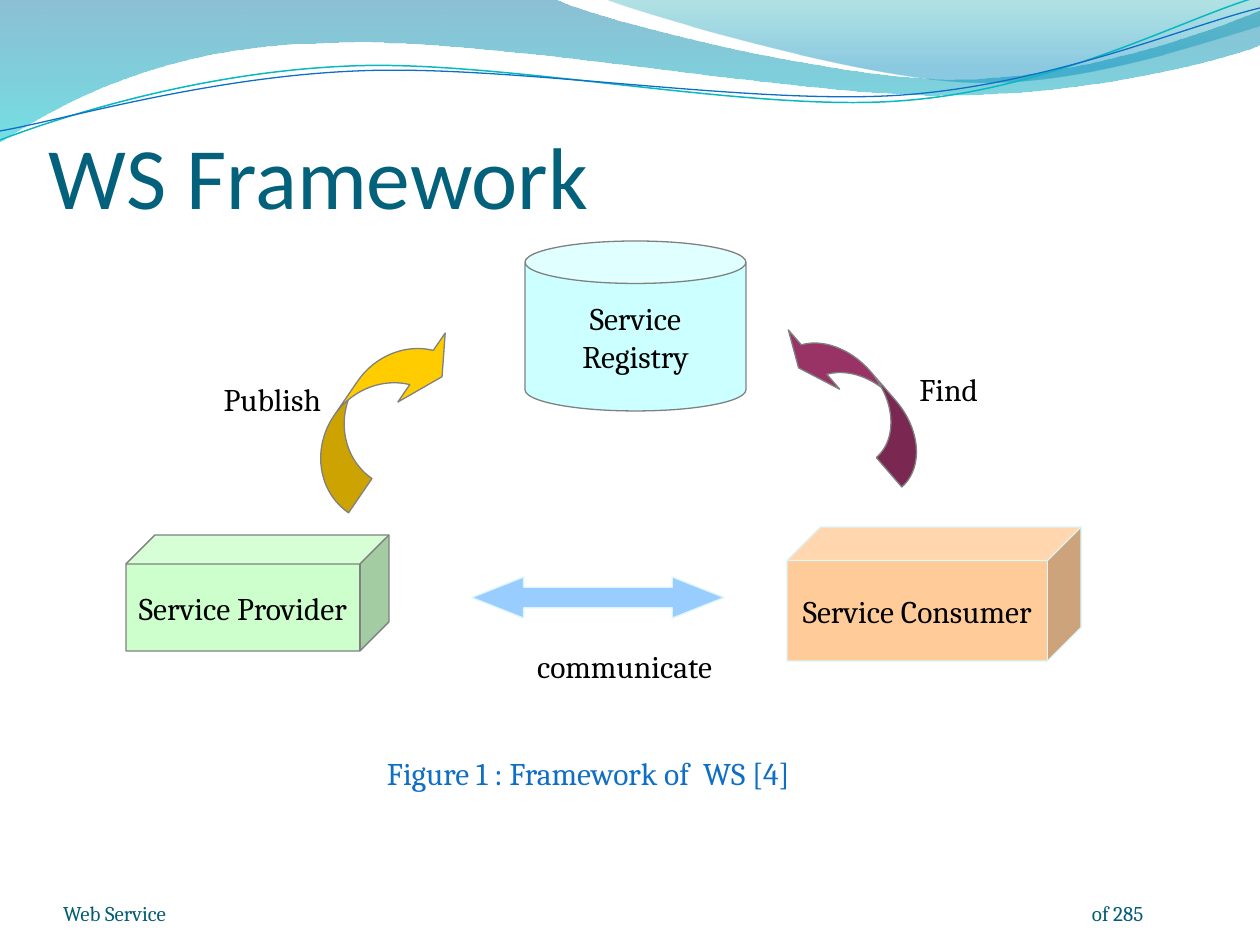
from dataclasses import dataclass
from typing import Optional

from lxml import etree
from pptx import Presentation
from pptx import util as u
from pptx.dml.color import RGBColor
from pptx.enum import shapes, text
from pptx.oxml.ns import qn

EMU_PER_PX = 914400 / 126
COLORS = {
    "black": "000000", "title": "04617B", "caption": "0F6FC6", "footer": "045D75",
    "gray": "808080", "ice": "DBF5F9", "aqua": "CCFFFF", "green": "CCFFCC",
    "peach": "FFCC99", "gold": "FFCC00", "plum": "993366", "sky": "99CCFF",
    "deep blue": "0074A1", "cyan": "00C6CF", "teal": "00A1A9", "blue": "008BBF",
    "teal line": "0AB8BF", "blue line": "0F6FC6",
}
KIND = shapes.MSO_SHAPE
LEFT, CENTER, RIGHT = text.PP_ALIGN.LEFT, text.PP_ALIGN.CENTER, text.PP_ALIGN.RIGHT
TOP, BOTTOM = text.MSO_ANCHOR.TOP, text.MSO_ANCHOR.BOTTOM


@dataclass
class GradientStop:
    color: str
    position: float
    opacity: int


@dataclass
class Wave:
    """A path of segments: two numbers are a line, six a Bezier curve (px)."""
    start: tuple
    segments: list
    gradient: Optional[list] = None
    line: Optional[str] = None
    weight: float = 0.75


@dataclass
class Node:
    kind: int
    box: tuple
    fill: str
    line: str
    adjustments: tuple
    words: str = ""
    rotation: float = 0
    mirrored: bool = False


@dataclass
class Label:
    words: str
    box: tuple
    size: int = 18
    color: str = "black"
    align: int = RIGHT
    font: str = "Cambria"
    anchor: int = TOP
    margins: tuple = (13, 6, 13, 6)


WAVES = [
    Wave((0, 0), [(554, -1), (600, 21, 837, 79, 955, 79), (1075, 79, 1207, 33, 1260, 11),
                  (1261, 45), (1239, 55, 1096, 96, 940, 95), (784, 95, 481, 35, 324, 43),
                  (163, 45, 58, 105, -1, 142), (0, 0)],
         [GradientStop("deep blue", 0, 45), GradientStop("cyan", 1, 55)]),
    Wave((604, -1), [(641, 14, 859, 78, 969, 82), (1079, 87, 1211, 40, 1260, 26),
                     (1260, 0), (604, -1)],
         [GradientStop("teal", 0, 30), GradientStop("blue", 0.8, 45)]),
    Wave((0, 140), [(60, 117, 199, 72, 349, 66), (498, 59, 747, 112, 898, 101),
                    (1050, 91, 1182, 19, 1257, -3)], line="teal line", weight=0.85),
    Wave((0, 131), [(59, 121, 207, 77, 357, 71), (508, 64, 752, 106, 903, 95),
                    (1053, 84, 1186, 26, 1260, 8)], line="blue line"),
]

NODES = [
    Node(KIND.CAN, (525, 241, 221, 170), "aqua", "gray", (0.25,), "Service\nRegistry"),
    Node(KIND.CUBE, (126, 535, 263, 116), "green", "gray", (0.25,), "Service Provider"),
    Node(KIND.CUBE, (787, 527, 294, 134), "peach", "ice", (0.25,), "Service Consumer"),
    Node(KIND.CURVED_DOWN_ARROW, (276, 375, 207, 67), "gold", "gray", (0.62, 1.25, 0.33),
         rotation=304.5),
    Node(KIND.CURVED_LEFT_ARROW, (831, 297, 52, 197), "plum", "gray", (0.75, 1.51, 0.33),
         rotation=139.1, mirrored=True),
    Node(KIND.LEFT_RIGHT_ARROW, (472, 577, 252, 41), "sky", "ice", (0.5, 1.26)),
]

LABELS = [
    Label("WS Framework", (49, 88, 1162, 139), 50, "title", LEFT, "Calibri", BOTTOM, (0, 6, 0, 0)),
    Label("Publish", (187, 374, 147, 50)),
    Label("Find", (896, 364, 95, 50)),
    Label("communicate", (494, 641, 231, 50)),
    Label("Figure 1 : Framework of  WS [4]", (374, 748, 512, 50), color="caption", align=LEFT),
    Label("Web Service", (63, 876, 294, 50), 12, "footer", LEFT, anchor=BOTTOM,
          margins=(0, 0, 0, 0)),
    Label("of 285", (1092, 876, 105, 50), 12, "footer", LEFT, anchor=BOTTOM,
          margins=(0, 0, 0, 0)),
]


def px(length: float) -> int:
    return round(length * EMU_PER_PX)


def rgb(name: str) -> RGBColor:
    return RGBColor.from_string(COLORS[name])


def bend(shape, segments: list) -> None:
    """Give the straight sides of a freeform their Bezier control points."""
    sides = list(shape.element.spPr.iter(qn("a:lnTo")))
    for side, segment in zip(sides, segments):
        if len(segment) == 2:
            continue
        side.tag = qn("a:cubicBezTo")
        for position, start in enumerate((0, 2)):
            point = etree.Element(qn("a:pt"))
            point.set("x", str(px(segment[start]) - shape.left))
            point.set("y", str(px(segment[start + 1]) - shape.top))
            side.insert(position, point)


def fill_gradient(shape, stops: list) -> None:
    shape.fill.gradient()
    shape.fill.gradient_angle = 270
    for target, stop in zip(shape.fill.gradient_stops, stops):
        target.color.rgb = rgb(stop.color)
        target.position = stop.position
    for color, stop in zip(shape.element.spPr.iter(qn("a:srgbClr")), stops):
        etree.SubElement(color, qn("a:alpha")).set("val", str(stop.opacity * 1000))


def draw_wave(page, wave: Wave) -> None:
    corners = [(px(x), px(y)) for x, y in (segment[-2:] for segment in wave.segments)]
    builder = page.shapes.build_freeform(*map(px, wave.start), scale=1.0)
    builder.add_line_segments(corners, close=wave.gradient is not None)
    shape = builder.convert_to_shape()
    bend(shape, wave.segments)
    shape.shadow.inherit = False
    if wave.gradient:
        fill_gradient(shape, wave.gradient)
        shape.line.fill.background()
    else:
        shape.fill.background()
        shape.line.color.rgb = rgb(wave.line)
        shape.line.width = u.Pt(wave.weight)


def write(frame, words: str, size: int, color: str, align: int, font: str) -> None:
    frame.text = words
    for para in frame.paragraphs:
        para.alignment = align
        for span in para.runs:
            span.font.name = font
            span.font.size = u.Pt(size)
            span.font.color.rgb = rgb(color)


def draw_node(page, node: Node) -> None:
    shape = page.shapes.add_shape(node.kind, *map(px, node.box))
    shape.shadow.inherit = False
    shape.rotation = node.rotation
    if node.mirrored:
        shape.element.spPr.find(qn("a:xfrm")).set("flipH", "1")
    for index, value in enumerate(node.adjustments):
        shape.adjustments[index] = value
    shape.fill.solid()
    shape.fill.fore_color.rgb = rgb(node.fill)
    shape.line.color.rgb = rgb(node.line)
    shape.line.width = u.Pt(0.75)
    if node.words:
        shape.text_frame.word_wrap = False
        shape.text_frame.vertical_anchor = text.MSO_ANCHOR.MIDDLE
        write(shape.text_frame, node.words, 18, "black", CENTER, "Cambria")


def draw_label(page, label: Label) -> None:
    frame = page.shapes.add_textbox(*map(px, label.box)).text_frame
    frame.word_wrap = True
    frame.vertical_anchor = label.anchor
    (frame.margin_left, frame.margin_top,
     frame.margin_right, frame.margin_bottom) = map(px, label.margins)
    write(frame, label.words, label.size, label.color, label.align, label.font)


def main() -> None:
    deck = Presentation()
    deck.slide_width, deck.slide_height = px(1260), px(945)
    page = deck.slides.add_slide(deck.slide_layouts[6])
    for draw, items in ((draw_wave, WAVES), (draw_node, NODES), (draw_label, LABELS)):
        for item in items:
            draw(page, item)
    deck.save("out.pptx")


if __name__ == "__main__":
    main()
